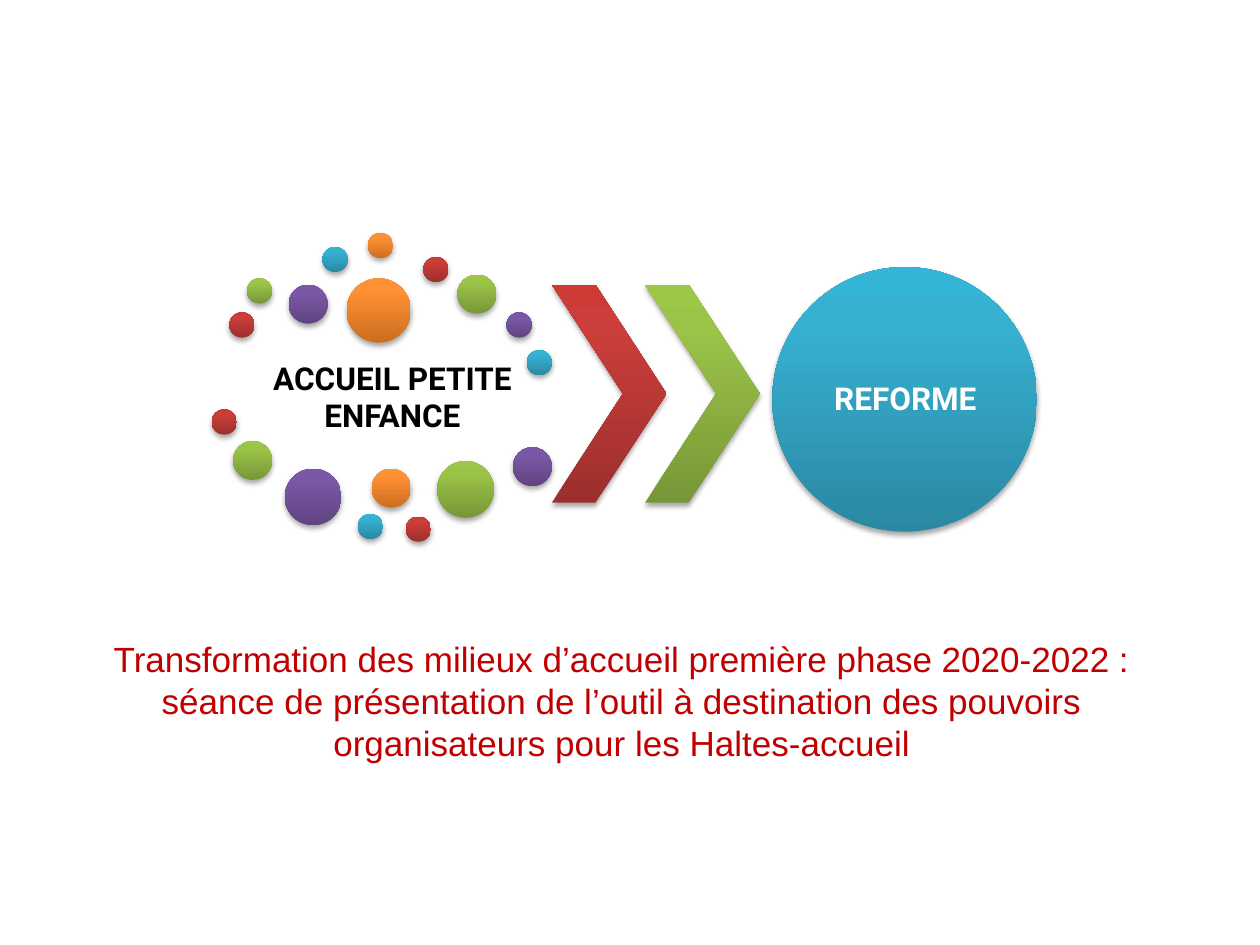
from copy import deepcopy

from lxml.etree import SubElement
from pptx import Presentation
from pptx.dml.color import RGBColor
from pptx.enum.shapes import MSO_SHAPE as Shape
from pptx.enum.text import MSO_ANCHOR as Anchor, PP_ALIGN as Align
from pptx.oxml.ns import qn
from pptx.util import Inches, Pt

COLORS = {"black": "000000", "white": "FFFFFF", "crimson": "C00000"}
GRADIENTS = {
    "red": ("9C2F2D", "CB3E3A", "CE3B37"),
    "green": ("779737", "9BC348", "9DC746"),
    "purple": ("5F4480", "7B58A6", "7C57A8"),
    "blue": ("2A88A2", "37B1D2", "34B4D6"),
    "orange": ("CC6E20", "FF9034", "FF9136"),
}
STOPS = (0, 0.8, 1)
SMALL, MEDIUM, LARGE, LARGEST = 0.2, 0.31, 0.45, 0.51
DOTS = [
    ("red", 1.82, 2.48, SMALL),
    ("green", 1.96, 2.21, SMALL),
    ("purple", 2.29, 2.26, MEDIUM),
    ("blue", 2.56, 1.96, SMALL),
    ("orange", 2.92, 1.85, SMALL),
    ("red", 3.36, 2.04, SMALL),
    ("green", 3.63, 2.18, MEDIUM),
    ("purple", 4.02, 2.48, SMALL),
    ("blue", 4.18, 2.78, SMALL),
    ("orange", 2.75, 2.21, LARGEST),
    ("red", 1.68, 3.25, SMALL),
    ("green", 1.85, 3.5, MEDIUM),
    ("purple", 2.26, 3.72, LARGE),
    ("blue", 2.84, 4.08, SMALL),
    ("orange", 2.95, 3.72, MEDIUM),
    ("red", 3.22, 4.1, SMALL),
    ("green", 3.47, 3.66, LARGE),
    ("purple", 4.07, 3.55, MEDIUM),
]


def write(frame, text, font="Roboto", size=18, color="black", bold=False, spacing=1.0):
    """Put one centred, formatted paragraph in a text frame."""
    frame.word_wrap = True
    para = frame.paragraphs[0]
    para.alignment = Align.CENTER
    para.line_spacing = spacing
    para.space_before = Pt(0)
    span = para.add_run()
    span.text = text
    span.font.name = font
    span.font.size = Pt(size)
    span.font.bold = bold
    span.font.color.rgb = RGBColor.from_string(COLORS[color])


class Painter:
    """Draw the elements of one slide in a shared style."""

    def __init__(self, page):
        self.page = page

    def subtitle(self, text, left, top, width, height, **style):
        """Place and fill the subtitle, dropping the unused title."""
        title = self.page.shapes.title._element
        title.getparent().remove(title)
        box = self.page.placeholders[1]
        box.left, box.top = Inches(left), Inches(top)
        box.width, box.height = Inches(width), Inches(height)
        write(box.text_frame, text, **style)

    def label(self, text, left, top, width, height, inset=0, **style):
        """Add bold text centred in a box."""
        box = self.page.shapes.add_textbox(*map(Inches, (left, top, width, height)))
        frame = box.text_frame
        frame.vertical_anchor = Anchor.MIDDLE
        frame.margin_left = frame.margin_right = Inches(inset)
        frame.margin_top = frame.margin_bottom = Inches(inset)
        write(frame, text, bold=True, **style)

    def shape(self, kind, color, left, top, width, height):
        """Add a borderless shape with a vertical gradient and soft shadow."""
        shape = self.page.shapes.add_shape(kind, *map(Inches, (left, top, width, height)))
        shape.line.fill.background()
        shape.fill.gradient()
        shape.fill.gradient_angle = 90
        properties = shape._element.spPr
        stop_list = properties.find(".//" + qn("a:gsLst"))
        stop_list.insert(1, deepcopy(stop_list[0]))
        for stop, position, tint in zip(shape.fill.gradient_stops, STOPS, GRADIENTS[color]):
            stop.position = position
            stop.color.rgb = RGBColor.from_string(tint)
        shape.shadow.inherit = False
        shadow = SubElement(
            properties.find(qn("a:effectLst")), qn("a:outerShdw"),
            blurRad=str(Pt(3.1)), dist=str(Pt(1.8)), dir="5400000", rotWithShape="0")
        shade = SubElement(shadow, qn("a:srgbClr"), val=COLORS["black"])
        SubElement(shade, qn("a:alpha"), val="35000")
        return shape

    def circle(self, color, left, top, size):
        """Add a circle."""
        self.shape(Shape.OVAL, color, left, top, size, size)

    def chevron(self, color, left):
        """Add one of the tall chevrons."""
        arrow = self.shape(Shape.CHEVRON, color, left, 2.26, 0.91, 1.73)
        arrow.adjustments[0] = 0.62


def main():
    """Build the reform title slide."""
    deck = Presentation()
    deck.slide_width, deck.slide_height = Inches(10), Inches(7.5)
    painter = Painter(deck.slides.add_slide(deck.slide_layouts[0]))
    painter.subtitle(
        "Transformation des milieux d’accueil première phase 2020-2022 : "
        "séance de présentation de l’outil à destination des pouvoirs "
        "organisateurs pour les Haltes-accueil",
        0.35, 5.01, 9.17, 1.18, font="Arial", size=20, color="crimson")
    painter.label("ACCUEIL PETITE ENFANCE", 1.88, 2.74, 2.47, 0.81, inset=0.03)
    for dot in DOTS:
        painter.circle(*dot)
    painter.chevron("red", 4.38)
    painter.chevron("green", 5.12)
    painter.circle("blue", 6.13, 2.12, 2.1)
    painter.label("REFORME", 6.44, 2.43, 1.49, 1.49, color="white", spacing=0.9)
    deck.save("out.pptx")


if __name__ == "__main__":
    main()
